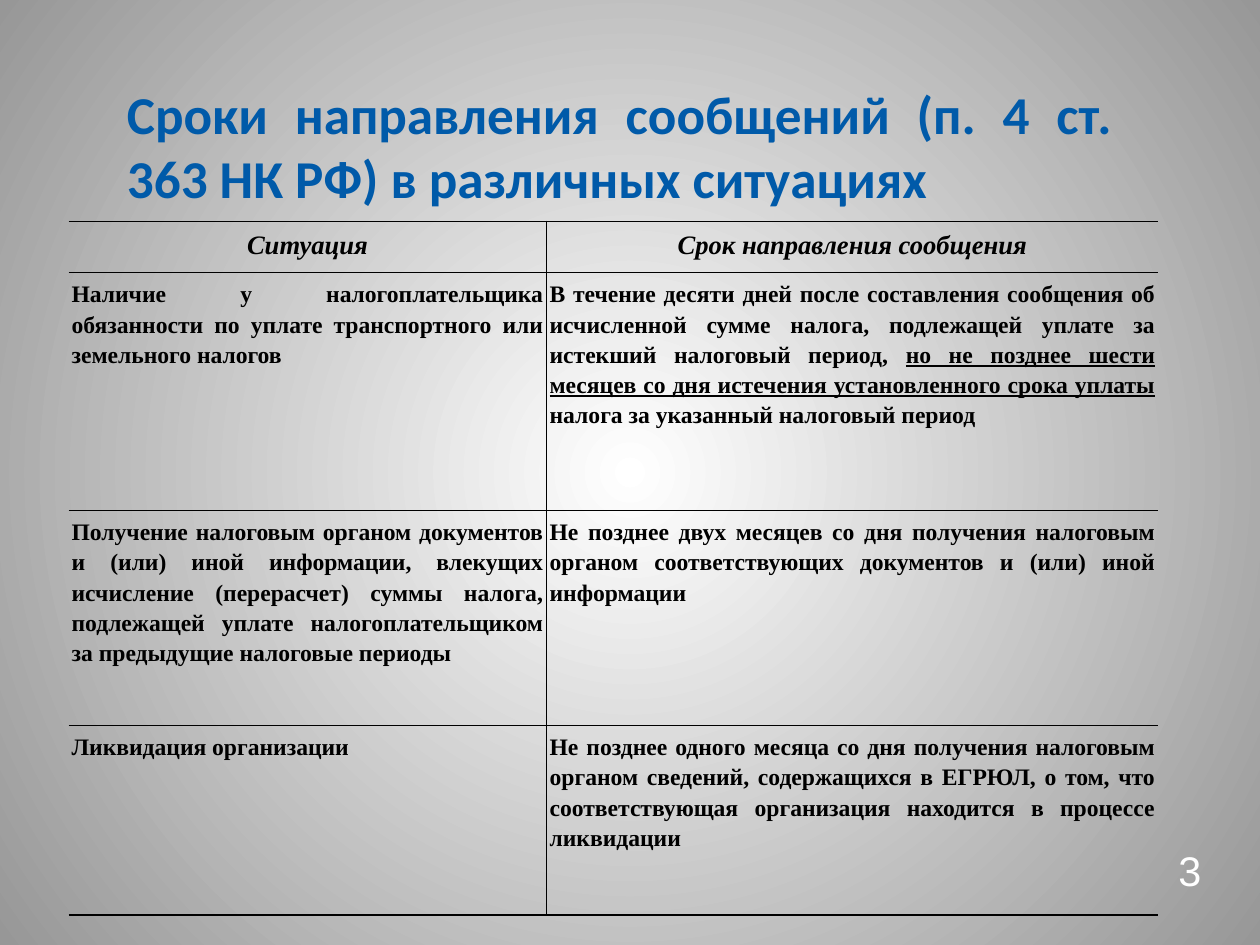
import pptx
import pptx.dml.color
import pptx.enum.dml
import pptx.enum.text
import pptx.oxml
import pptx.oxml.ns
import pptx.util
from dataclasses import dataclass

Inches = pptx.util.Inches
Pt = pptx.util.Pt
Align = pptx.enum.text.PP_ALIGN
Anchor = pptx.enum.text.MSO_ANCHOR


@dataclass(frozen=True)
class Theme:
    ink: str = "000000"
    heading: str = "005AA9"
    number: str = "FFFFFF"
    glow: str = "FFFFFF"
    edge: str = "979797"
    title_font: str = "Calibri"
    table_font: str = "Times New Roman"
    number_font: str = "Arial"
    title_size: int = 36
    header_size: int = 18
    cell_size: int = 16
    number_size: int = 28
    rule_width: float = 1
    line_spacing: float = 1.15


class Page:
    unit = 0.74

    def __init__(self, deck, theme):
        self.theme = theme
        self.slide = deck.slides.add_slide(deck.slide_layouts[5])

    def grid(self, *steps):
        return [Inches(step * self.unit) for step in steps]

    def style(self, para, font, size, color, align, bold=False, italic=False):
        para.alignment = align
        para.font.name = font
        para.font.size = Pt(size)
        para.font.bold = bold
        para.font.italic = italic
        para.font.color.rgb = pptx.dml.color.RGBColor.from_string(color)

    def frame(self, box):
        frame = box.text_frame
        frame.word_wrap = True
        frame.auto_size = pptx.enum.text.MSO_AUTO_SIZE.NONE
        frame.vertical_anchor = Anchor.MIDDLE
        frame.margin_left = frame.margin_right = Inches(0.12)
        frame.margin_top = frame.margin_bottom = Inches(0.06)
        return frame

    def background(self):
        fill = self.slide.background.fill
        fill.gradient()
        for stop, position, color in zip(fill.gradient_stops, (0, 1), (self.theme.glow, self.theme.edge)):
            stop.position = position
            stop.color.rgb = pptx.dml.color.RGBColor.from_string(color)
        linear = self.slide._element.find(".//" + pptx.oxml.ns.qn("a:lin"))
        circle = pptx.oxml.parse_xml(
            f'<a:path {pptx.oxml.ns.nsdecls("a")} path="circle">'
            '<a:fillToRect l="50000" t="50000" r="50000" b="50000"/></a:path>')
        linear.getparent().replace(linear, circle)

    def title(self, text, *area):
        box = self.slide.shapes.title
        box.left, box.top, box.width, box.height = self.grid(*area)
        para = self.frame(box).paragraphs[0]
        para.text = text
        theme = self.theme
        self.style(para, theme.title_font, theme.title_size, theme.heading, Align.JUSTIFY, bold=True)

    def number(self, text, *area):
        box = self.slide.shapes.add_textbox(*self.grid(*area))
        para = self.frame(box).paragraphs[0]
        para.text = text
        para.line_spacing = Pt(24.9)
        theme = self.theme
        self.style(para, theme.number_font, theme.number_size, theme.number, Align.CENTER)

    def borders(self, cell, hidden):
        properties = cell._tc.get_or_add_tcPr()
        for side in "LRTB":
            paint = "<a:noFill/>" if side == hidden else (
                f'<a:solidFill><a:srgbClr val="{self.theme.ink}"/></a:solidFill>')
            properties.append(pptx.oxml.parse_xml(
                f'<a:ln{side} {pptx.oxml.ns.nsdecls("a")} w="{Pt(self.theme.rule_width)}">'
                f"{paint}</a:ln{side}>"))

    def cell(self, cell, spans, header, hidden):
        cell.margin_left = cell.margin_right = Inches(0.03)
        cell.margin_top = cell.margin_bottom = Inches(0.05)
        self.borders(cell, hidden)
        cell.fill.background()
        para = cell.text_frame.paragraphs[0]
        theme = self.theme
        para.line_spacing = theme.line_spacing
        size = theme.header_size if header else theme.cell_size
        align = Align.CENTER if header else Align.JUSTIFY
        self.style(para, theme.table_font, size, theme.ink, align, bold=True, italic=header)
        for index, text in enumerate(spans):
            span = para.add_run()
            span.text = text
            if index % 2:
                span.font.underline = True

    def table(self, rows, left, top, widths, heights):
        area = self.grid(left, top, sum(widths), sum(heights))
        table = self.slide.shapes.add_table(len(heights), len(widths), *area).table
        table.first_row = table.horz_banding = False
        for column, width in zip(table.columns, self.grid(*widths)):
            column.width = width
        for row, height in zip(table.rows, self.grid(*heights)):
            row.height = height
        for row_index, row in enumerate(rows):
            for column_index, spans in enumerate(row):
                self.cell(table.cell(row_index, column_index), spans,
                          row_index == 0, "LR"[column_index])


DEADLINES = [
    [["Ситуация"], ["Срок направления сообщения"]],
    [["Наличие у налогоплательщика обязанности по уплате транспортного или земельного налогов"],
     ["В течение десяти дней после составления сообщения об исчисленной сумме налога, "
      "подлежащей уплате за истекший налоговый период, ",
      "но не позднее шести месяцев со дня истечения установленного срока уплаты ",
      "налога за указанный налоговый период"]],
    [["Получение налоговым органом документов и (или) иной информации, влекущих исчисление "
      "(перерасчет) суммы налога, подлежащей уплате налогоплательщиком за предыдущие налоговые периоды"],
     ["Не позднее двух месяцев со дня получения налоговым органом соответствующих документов "
      "и (или) иной информации"]],
    [["Ликвидация организации"],
     ["Не позднее одного месяца со дня получения налоговым органом сведений, содержащихся в ЕГРЮЛ, "
      "о том, что соответствующая организация находится в процессе ликвидации"]],
]


def main():
    deck = pptx.Presentation()
    deck.slide_width = Inches(16 * Page.unit)
    deck.slide_height = Inches(12 * Page.unit)
    page = Page(deck, Theme())
    page.background()
    page.table(DEADLINES, 0.87, 2.81, widths=(6.07, 7.77), heights=(0.65, 3.02, 2.73, 2.41))
    page.title("Сроки направления сообщений (п. 4 ст. 363 НК РФ) в различных ситуациях",
               1.45, 0.88, 12.84, 1.93)
    page.number("3", 14.57, 10.57, 1.08, 1.11)
    deck.save("out.pptx")


if __name__ == "__main__":
    main()
